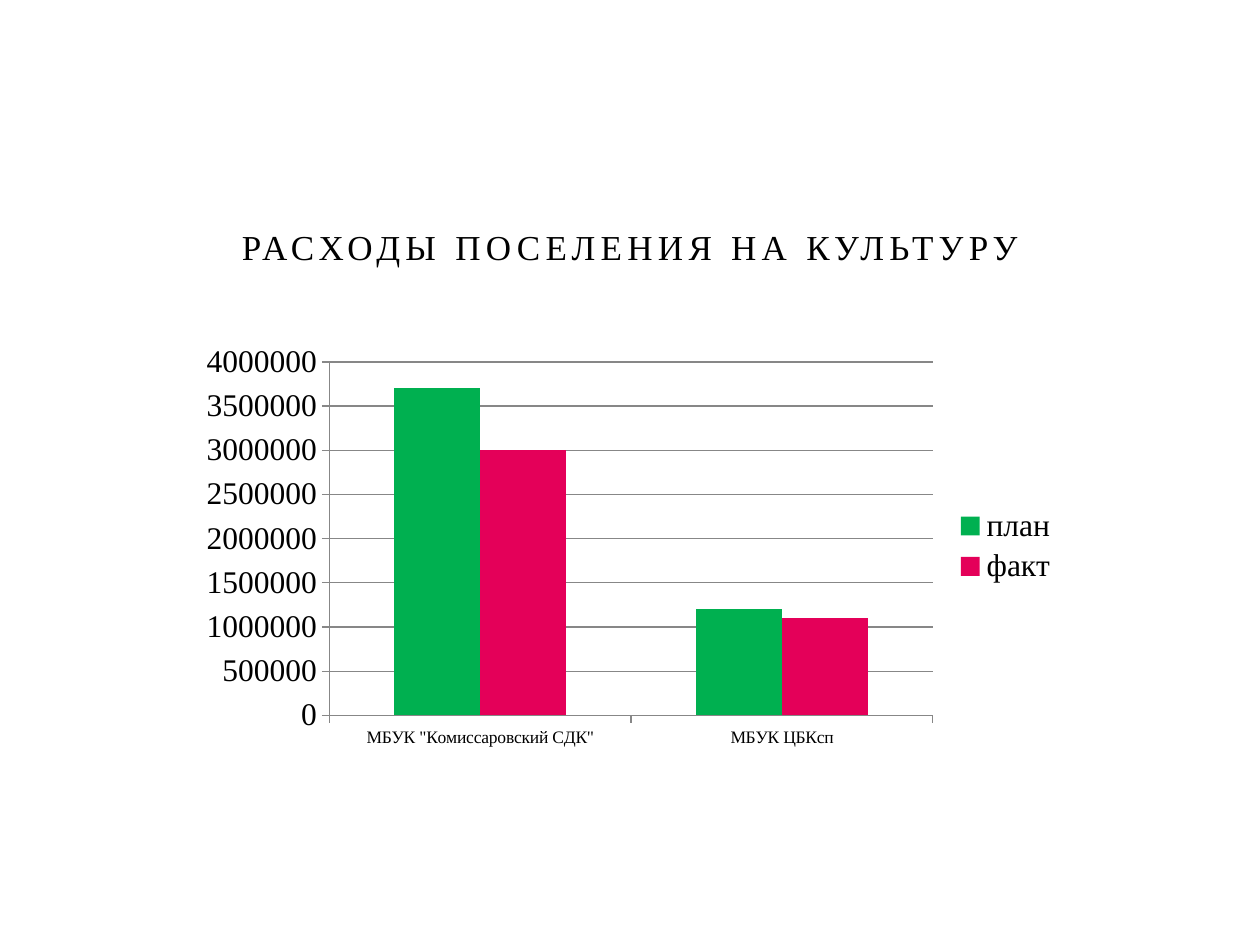
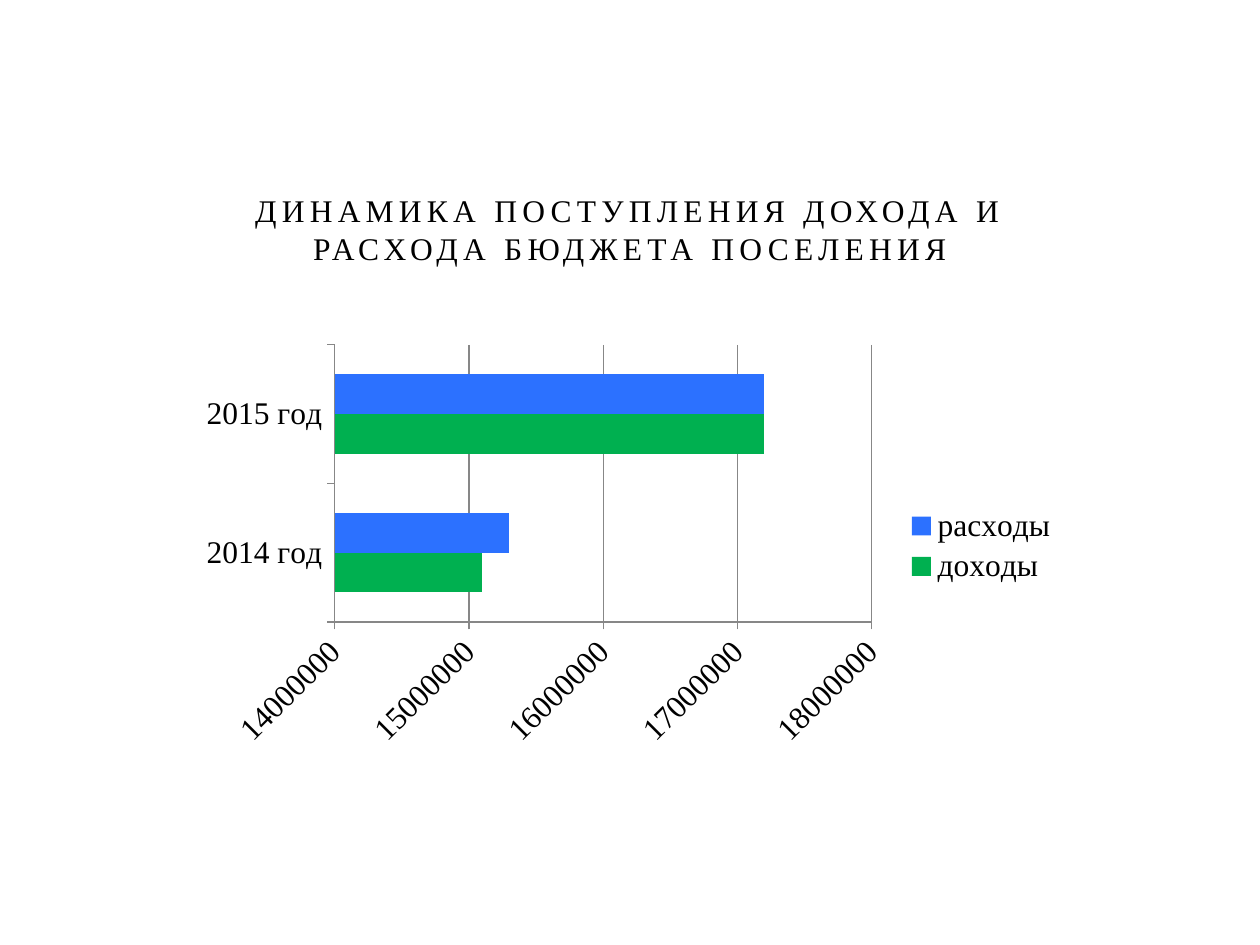
from pptx import Presentation
from pptx.chart.data import CategoryChartData
from pptx.dml.color import RGBColor
from pptx.enum.chart import XL_CHART_TYPE as ChartType, XL_LEGEND_POSITION as LegendPosition
from pptx.enum.chart import XL_TICK_MARK as TickMark
from pptx.enum.text import MSO_ANCHOR as Anchor, MSO_AUTO_SIZE as AutoSize, PP_ALIGN as Align
from pptx.util import Inches, Pt

# Content
SLIDES = [
    {
        "title": "РАСХОДЫ ПОСЕЛЕНИЯ НА КУЛЬТУРУ",
        "title_size": 20,
        "kind": ChartType.COLUMN_CLUSTERED,
        "categories": ['МБУК "Комиссаровский СДК"', "МБУК ЦБКсп"],
        "category_size": 10,
        "series": [
            ("план", (3700000, 1200000), "00B050"),
            ("факт", (3000000, 1100000), "E40059"),
        ],
        "scale": (0, 4000000, 500000),
        "label_angle": 0,
    },
    {
        "title": "ДИНАМИКА ПОСТУПЛЕНИЯ ДОХОДА И РАСХОДА БЮДЖЕТА ПОСЕЛЕНИЯ",
        "title_size": 18,
        "kind": ChartType.BAR_CLUSTERED,
        "categories": ["2014 год", "2015 год"],
        "category_size": 18,
        "series": [
            ("доходы", (15100000, 17200000), "00B050"),
            ("расходы", (15300000, 17200000), "2C71FF"),
        ],
        "scale": (14000000, 18000000, 1000000),
        "label_angle": -45,
    },
]

# Shared style
FONT = "Times New Roman"
TEXT_COLOR = "000000"
LINE_COLOR = "878787"
CHART_SIZE = 18
TITLE_BOX = (1.5, 1.42, 7, 0.75)
CHART_BOX = (1.5, 2.67, 7, 3.33)


def color(value):
    return RGBColor.from_string(value)


def style_font(font, size):
    font.name = FONT
    font.size = Pt(size)
    font.bold = False
    font.color.rgb = color(TEXT_COLOR)


def style_line(line):
    line.color.rgb = color(LINE_COLOR)
    line.width = Pt(0.75)


def write_text(shape, text, size, align=Align.CENTER, anchor=Anchor.BOTTOM, spacing=3):
    frame = shape.text_frame
    frame.word_wrap = True
    frame.auto_size = AutoSize.NONE
    frame.vertical_anchor = anchor
    paragraph = frame.paragraphs[0]
    paragraph.alignment = align
    run = paragraph.add_run()
    run.text = text
    style_font(run.font, size)
    run.font._element.set("spc", str(spacing * 100))


def add_title(slide, text, size):
    title = slide.shapes.title
    title.left, title.top, title.width, title.height = map(Inches, TITLE_BOX)
    write_text(title, text, size)


def style_axis(axis, size):
    axis.major_tick_mark = TickMark.OUTSIDE
    axis.minor_tick_mark = TickMark.NONE
    style_font(axis.tick_labels.font, size)
    style_line(axis.format.line)


def add_budget_chart(slide, content):
    data = CategoryChartData()
    data.categories = content["categories"]
    for name, values, _ in content["series"]:
        data.add_series(name, values)
    chart = slide.shapes.add_chart(content["kind"], *map(Inches, CHART_BOX), data).chart
    chart.has_title = False
    style_font(chart.font, CHART_SIZE)

    # Bars
    plot = chart.plots[0]
    plot.gap_width = 150
    plot.overlap = 0
    plot.vary_by_categories = False
    for series, (_, _, fill) in zip(plot.series, content["series"]):
        series.format.fill.solid()
        series.format.fill.fore_color.rgb = color(fill)

    # Axes
    style_axis(chart.category_axis, content["category_size"])
    value_axis = chart.value_axis
    style_axis(value_axis, CHART_SIZE)
    value_axis.minimum_scale, value_axis.maximum_scale, value_axis.major_unit = content["scale"]
    value_axis.tick_labels.number_format = "0"
    value_axis.tick_labels.number_format_is_linked = False
    value_axis.has_major_gridlines = True
    style_line(value_axis.major_gridlines.format.line)
    if content["label_angle"]:
        body = value_axis._element.txPr.bodyPr
        body.set("rot", str(content["label_angle"] * 60000))
        body.set("vert", "horz")

    # Legend
    chart.has_legend = True
    chart.legend.position = LegendPosition.RIGHT
    chart.legend.include_in_layout = False
    style_font(chart.legend.font, CHART_SIZE)


def main():
    presentation = Presentation()
    presentation.slide_width = Inches(10)
    presentation.slide_height = Inches(7.5)
    title_only = presentation.slide_layouts[5]
    for content in SLIDES:
        slide = presentation.slides.add_slide(title_only)
        add_title(slide, content["title"], content["title_size"])
        add_budget_chart(slide, content)
    presentation.save("out.pptx")


if __name__ == "__main__":
    main()
